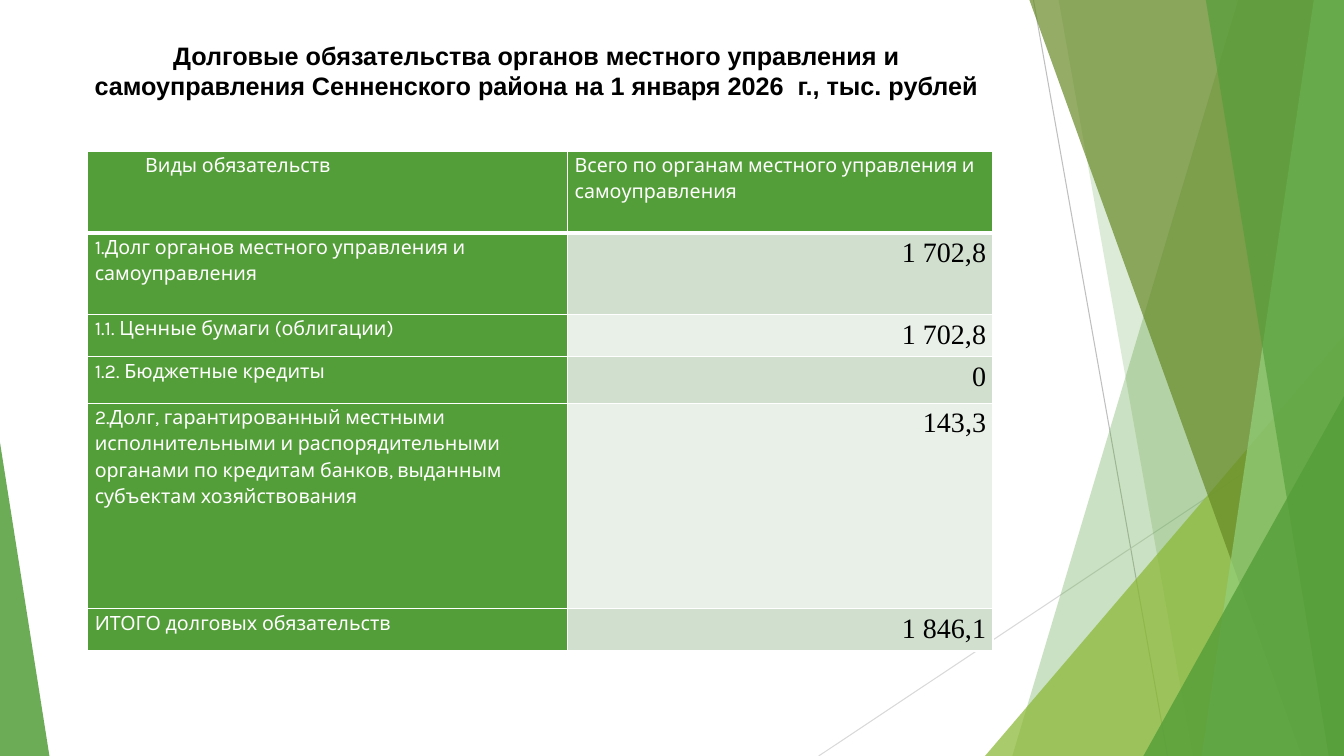
from lxml import etree
from pptx import Presentation, util as u
from pptx.dml.color import RGBColor
from pptx.enum import shapes, text
from pptx.oxml.ns import qn

PX = 9144
WIDTH, HEIGHT = 1333, 750
COLORS = {
    "green": "549E39", "lime": "8AB833", "olive": "678A26", "mint": "93D07D",
    "gray": "BFBFBF", "light_gray": "D9D9D9", "white": "FFFFFF", "black": "000000",
    "band_dark": "D1DFCE", "band_light": "E9F0E8",
}
LINES = [((1025, 0), (1158, 750), "gray"), ((1333, 403), (812, 750), "light_gray")]
BACK_BANDS = [(1228, 1004, "green", 30), (1050, 1183, "green", 20)]
FRONT_BANDS = [(1021, 1291, "olive", 70), (1303, 1192, "mint", 70), (1196, 1318, "green", 65)]
LIME_TRIANGLE = (977, 333, 356, 1, "lime", 72)
GREEN_TRIANGLES = [(1134, 393, 199, 1, "green", 80), (0, 439, 49, 0, "green", 85)]
TITLE = ("Долговые обязательства органов местного управления и самоуправления "
         "Сенненского района на 1 января 2026  г., тыс. рублей")
COLUMN_WIDTHS = [476, 422]
ROW_HEIGHTS = [81, 81, 42, 46, 204, 42]
DEBTS = [
    ("Виды обязательств", "Всего по органам местного управления и самоуправления"),
    ("1.Долг органов местного управления и самоуправления", "1 702,8"),
    ("1.1. Ценные бумаги (облигации)", "1 702,8"),
    ("1.2. Бюджетные кредиты", "0"),
    ("2.Долг, гарантированный местными исполнительными и распорядительными органами "
     "по кредитам банков, выданным субъектам хозяйствования", "143,3"),
    ("ИТОГО долговых обязательств", "1 846,1"),
]


def px(length):
    """Turn pixels into EMU."""
    return u.Emu(length * PX)


def rgb(name):
    """Return a named colour."""
    return RGBColor.from_string(COLORS[name])


def style_facet(shape, color, opacity):
    """Give a decorative shape a translucent fill and no line."""
    shape.shadow.inherit = False
    shape.line.fill.background()
    shape.fill.solid()
    shape.fill.fore_color.rgb = rgb(color)
    source = shape.element.spPr.find(qn("a:solidFill"))[0]
    etree.SubElement(source, qn("a:alpha")).set("val", str(opacity * 1000))


def add_line(slide, start, end, color):
    """Draw a thin line without a shadow."""
    line = slide.shapes.add_connector(
        shapes.MSO_CONNECTOR.STRAIGHT, *map(px, start + end))
    line.line.color.rgb = rgb(color)
    line.line.width = u.Pt(0.75)
    etree.SubElement(line.element.spPr, qn("a:effectLst"))


def add_band(slide, top_x, bottom_x, color, opacity):
    """Fill from a slanted edge to the right side of the slide."""
    builder = slide.shapes.build_freeform(top_x, 0, scale=PX)
    builder.add_line_segments([(WIDTH, 0), (WIDTH, HEIGHT), (bottom_x, HEIGHT)])
    style_facet(builder.convert_to_shape(), color, opacity)


def add_triangle(slide, left, top, width, apex, color, opacity):
    """Draw a triangle that stands on the bottom edge."""
    shape = slide.shapes.add_shape(
        shapes.MSO_SHAPE.ISOSCELES_TRIANGLE,
        px(left), px(top), px(width), px(HEIGHT - top))
    shape.adjustments[0] = apex
    style_facet(shape, color, opacity)


def format_font(paragraph, name, size, color, bold=False):
    """Format every run of a paragraph."""
    for run in paragraph.runs:
        run.font.name = name
        run.font.size = u.Pt(size)
        run.font.bold = bold
        run.font.color.rgb = rgb(color)


def add_title(slide):
    """Add the centred heading."""
    shape = slide.shapes.add_textbox(px(79), px(34), px(906), px(71))
    frame = shape.text_frame
    frame.word_wrap = True
    frame.vertical_anchor = text.MSO_ANCHOR.MIDDLE
    frame.text = TITLE
    paragraph = frame.paragraphs[0]
    paragraph.alignment = text.PP_ALIGN.CENTER
    format_font(paragraph, "Arial", 18, "black", bold=True)


def add_borders(cell, row):
    """Outline a cell in white with a thicker rule under the header."""
    properties = cell._tc.get_or_add_tcPr()
    widths = {"lnL": 1, "lnR": 1, "lnT": 3 if row == 1 else 1, "lnB": 3 if row == 0 else 1}
    for tag, width in widths.items():
        border = etree.SubElement(properties, qn(f"a:{tag}"), w=str(u.Pt(width)))
        fill = etree.SubElement(border, qn("a:solidFill"))
        etree.SubElement(fill, qn("a:srgbClr"), val=COLORS["white"])


def fill_cell(cell, content, row, column):
    """Write and style one table cell."""
    is_value = row > 0 and column == 1
    cell.margin_left = cell.margin_right = px(7)
    cell.margin_top = cell.margin_bottom = 0
    add_borders(cell, row)
    band = "band_dark" if row % 2 or row == len(DEBTS) - 1 else "band_light"
    if row == 2 or row == 4:
        band = "band_light"
    cell.fill.solid()
    cell.fill.fore_color.rgb = rgb(band if is_value else "green")
    cell.text_frame.text = content
    paragraph = cell.text_frame.paragraphs[0]
    paragraph.line_spacing = 1.15
    if is_value:
        paragraph.alignment = text.PP_ALIGN.RIGHT
        format_font(paragraph, "Times New Roman", 20, "black")
    else:
        format_font(paragraph, "Karla", 14, "white")


def add_debt_table(slide):
    """Add the table of debt obligations."""
    table = slide.shapes.add_table(
        len(DEBTS), len(COLUMN_WIDTHS), px(87), px(150),
        px(sum(COLUMN_WIDTHS)), px(sum(ROW_HEIGHTS))).table
    for column, width in zip(table.columns, COLUMN_WIDTHS):
        column.width = px(width)
    for row, height in zip(table.rows, ROW_HEIGHTS):
        row.height = px(height)
    for row, debt in enumerate(DEBTS):
        for column, content in enumerate(debt):
            fill_cell(table.cell(row, column), content, row, column)
    heading = table.cell(0, 0).text_frame.paragraphs[0]
    heading._p.get_or_add_pPr().set("marL", str(px(50)))


def main():
    """Build and save the slide."""
    presentation = Presentation()
    presentation.slide_width, presentation.slide_height = px(WIDTH), px(HEIGHT)
    slide = presentation.slides.add_slide(presentation.slide_layouts[6])
    for line in LINES:
        add_line(slide, *line)
    for band in BACK_BANDS:
        add_band(slide, *band)
    add_triangle(slide, *LIME_TRIANGLE)
    for band in FRONT_BANDS:
        add_band(slide, *band)
    for triangle in GREEN_TRIANGLES:
        add_triangle(slide, *triangle)
    add_debt_table(slide)
    add_title(slide)
    presentation.save("out.pptx")


if __name__ == "__main__":
    main()
